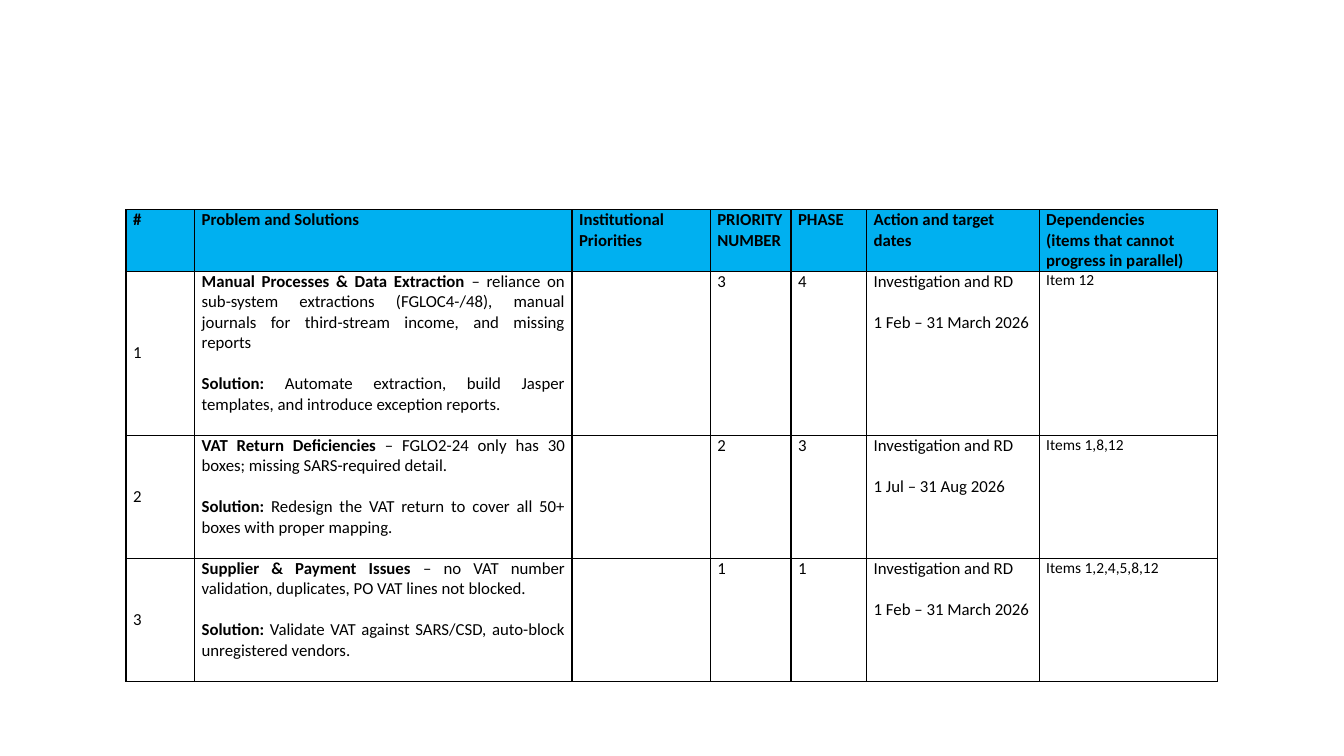
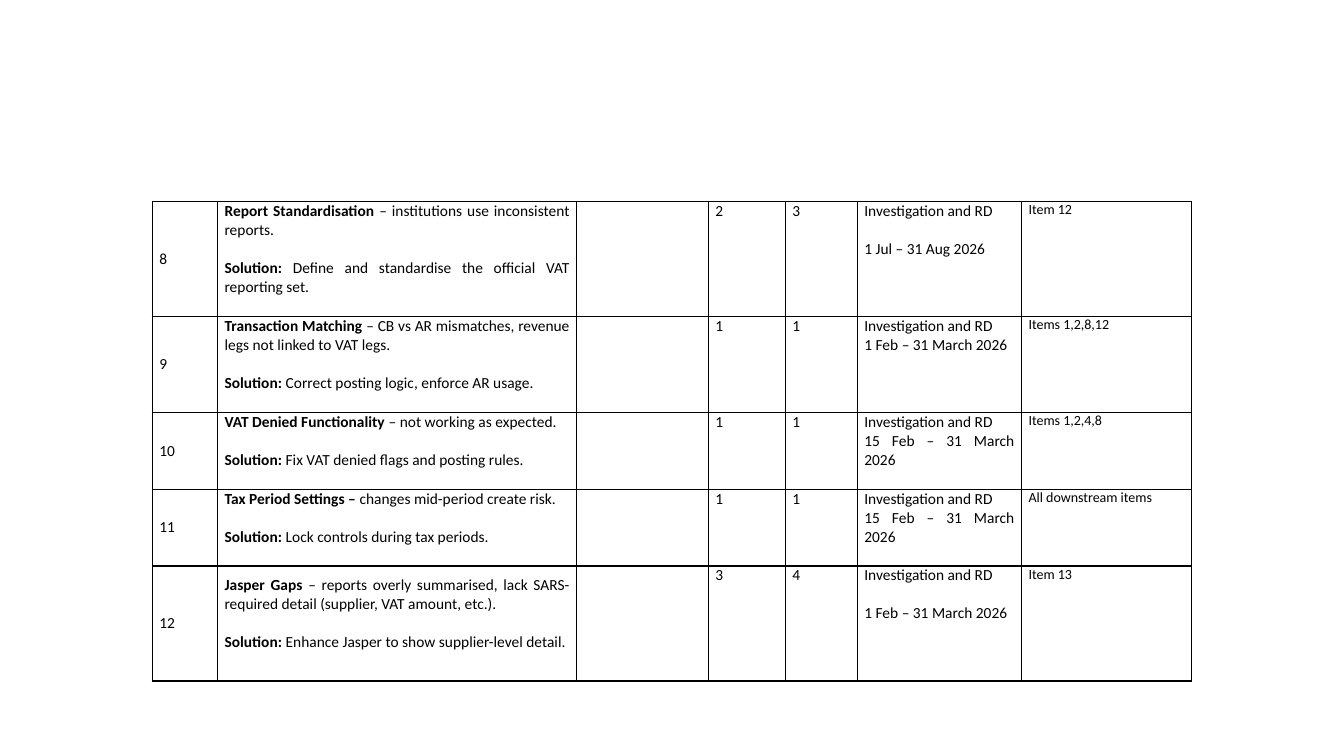
from lxml import etree
from pptx import Presentation
from pptx.dml.color import RGBColor
from pptx.enum.text import MSO_ANCHOR, PP_ALIGN
from pptx.oxml.ns import qn
from pptx.util import Inches, Pt

FONT = "Calibri"
BLACK = "000000"
HEADER_BLUE = "00B0F0"
CELL_MARGIN = Inches(0.07)
COLUMN_SHARES = [0.68, 3.74, 1.37, 0.8, 0.75, 1.71, 1.77]

HEADINGS = [
    "#", "Problem and Solutions", "Institutional Priorities",
    "PRIORITY\nNUMBER", "PHASE", "Action and target dates",
    "Dependencies\n(items that cannot progress in parallel)",
]

# Lines high, number, problem, detail, solution, priority, phase,
# target dates, gap above the dates, dependencies
FIRST_ITEMS = [
    (8, "1", "Manual Processes & Data Extraction",
     " – reliance on sub-system extractions (FGLOC4-/48), manual journals "
     "for third-stream income, and missing reports",
     " Automate extraction, build Jasper templates, and introduce exception reports.",
     "3", "4", "1 Feb – 31 March 2026", True, "Item 12"),
    (6, "2", "VAT Return Deficiencies",
     " – FGLO2-24 only has 30 boxes; missing SARS-required detail.",
     " Redesign the VAT return to cover all 50+ boxes with proper mapping.",
     "2", "3", "1 Jul – 31 Aug 2026", True, "Items 1,8,12"),
    (6, "3", "Supplier & Payment Issues",
     " – no VAT number validation, duplicates, PO VAT lines not blocked.",
     " Validate VAT against SARS/CSD, auto-block unregistered vendors.",
     "1", "1", "1 Feb – 31 March 2026", True, "Items 1,2,4,5,8,12"),
]
LATER_ITEMS = [
    (6, "8", "Report Standardisation ", "– institutions use inconsistent reports.",
     " Define and standardise the official VAT reporting set.",
     "2", "3", "1 Jul – 31 Aug 2026", True, "Item 12"),
    (5, "9", "Transaction Matching ",
     "– CB vs AR mismatches, revenue legs not linked to VAT legs.",
     " Correct posting logic, enforce AR usage.",
     "1", "1", "1 Feb – 31 March 2026", False, "Items 1,2,8,12"),
    (4, "10", "VAT Denied Functionality ", "– not working as expected.",
     " Fix VAT denied flags and posting rules.",
     "1", "1", "15 Feb – 31 March 2026", False, "Items 1,2,4,8"),
    (4, "11", "Tax Period Settings –", " changes mid-period create risk.",
     " Lock controls during tax periods.",
     "1", "1", "15 Feb – 31 March 2026", False, "All downstream items"),
    (6, "12", "Jasper Gaps ",
     "– reports overly summarised, lack SARS-required detail "
     "(supplier, VAT amount, etc.).",
     " Enhance Jasper to show supplier-level detail.",
     "3", "4", "1 Feb – 31 March 2026", True, "Item 13"),
]


def rgb(hex_colour):
    return RGBColor.from_string(hex_colour)


def format_run(run, size, bold):
    run.font.name = FONT
    run.font.size = Pt(size)
    run.font.bold = bold
    run.font.color.rgb = rgb(BLACK)


def add_borders(cell):
    properties = cell._tc.get_or_add_tcPr()
    for position, side in enumerate(("lnL", "lnR", "lnT", "lnB")):
        border = etree.Element(qn(f"a:{side}"), w=str(Pt(1)))
        solid = etree.SubElement(border, qn("a:solidFill"))
        etree.SubElement(solid, qn("a:srgbClr"), val=BLACK)
        properties.insert(position, border)


def style_cell(cell, fill=None):
    cell.margin_left = cell.margin_right = CELL_MARGIN
    cell.margin_top = cell.margin_bottom = 0
    if fill:
        cell.fill.solid()
        cell.fill.fore_color.rgb = rgb(fill)
    else:
        cell.fill.background()
    add_borders(cell)


def write(cell, text, size, bold=False, align=PP_ALIGN.JUSTIFY):
    cell.text_frame.text = text
    for paragraph in cell.text_frame.paragraphs:
        paragraph.alignment = align
        for run in paragraph.runs:
            format_run(run, size, bold)


def write_problem(cell, problem, detail, solution, size, pitch):
    """Set problem and solution one line apart, with a spare line below."""
    frame = cell.text_frame
    parts = [(problem, detail), ("Solution:", solution)]
    for index, (lead, rest) in enumerate(parts):
        paragraph = frame.add_paragraph() if index else frame.paragraphs[0]
        paragraph.alignment = PP_ALIGN.JUSTIFY
        if index:
            paragraph.space_before = pitch
        for text, bold in ((lead, True), (rest, False)):
            run = paragraph.add_run()
            run.text = text
            format_run(run, size, bold)
    cell.vertical_anchor = MSO_ANCHOR.MIDDLE
    cell.margin_bottom = pitch


def fill_item(cells, item, size, pitch):
    _, number, problem, detail, solution, priority, phase, dates, gap, needs = item
    for cell in cells:
        style_cell(cell)
    write(cells[0], number, size)
    cells[0].vertical_anchor = MSO_ANCHOR.MIDDLE
    write_problem(cells[1], problem, detail, solution, size, pitch)
    write(cells[3], priority, size)
    write(cells[4], phase, size)
    write(cells[5], f"Investigation and RD\n{dates}", size)
    if gap:
        cells[5].text_frame.paragraphs[1].space_before = pitch
    write(cells[6], needs, size - 1)


def add_plan_slide(deck, left, top, width, items, size, pitch, headings=None):
    slide = deck.slides.add_slide(deck.slide_layouts[6])
    line_counts = ([3] if headings else []) + [item[0] for item in items]
    table = slide.shapes.add_table(
        len(line_counts), len(COLUMN_SHARES), left, top, width,
        pitch * sum(line_counts)).table
    table.first_row = table.horz_banding = False
    for column, share in zip(table.columns, COLUMN_SHARES):
        column.width = int(width * share / sum(COLUMN_SHARES))
    for row, lines in zip(table.rows, line_counts):
        row.height = pitch * lines

    rows = list(table.rows)
    if headings:
        for cell, heading in zip(rows.pop(0).cells, headings):
            style_cell(cell, HEADER_BLUE)
            write(cell, heading, size, bold=True, align=PP_ALIGN.LEFT)
    for row, item in zip(rows, items):
        fill_item(list(row.cells), item, size, pitch)


def main():
    deck = Presentation()
    deck.slide_width, deck.slide_height = Inches(13.33), Inches(7.5)
    add_plan_slide(deck, Inches(1.25), Inches(2.08), Inches(10.83),
                   FIRST_ITEMS, 12, Pt(14.65), HEADINGS)
    add_plan_slide(deck, Inches(1.51), Inches(2), Inches(10.31),
                   LATER_ITEMS, 11, Pt(13.7))
    deck.save("out.pptx")


if __name__ == "__main__":
    main()
